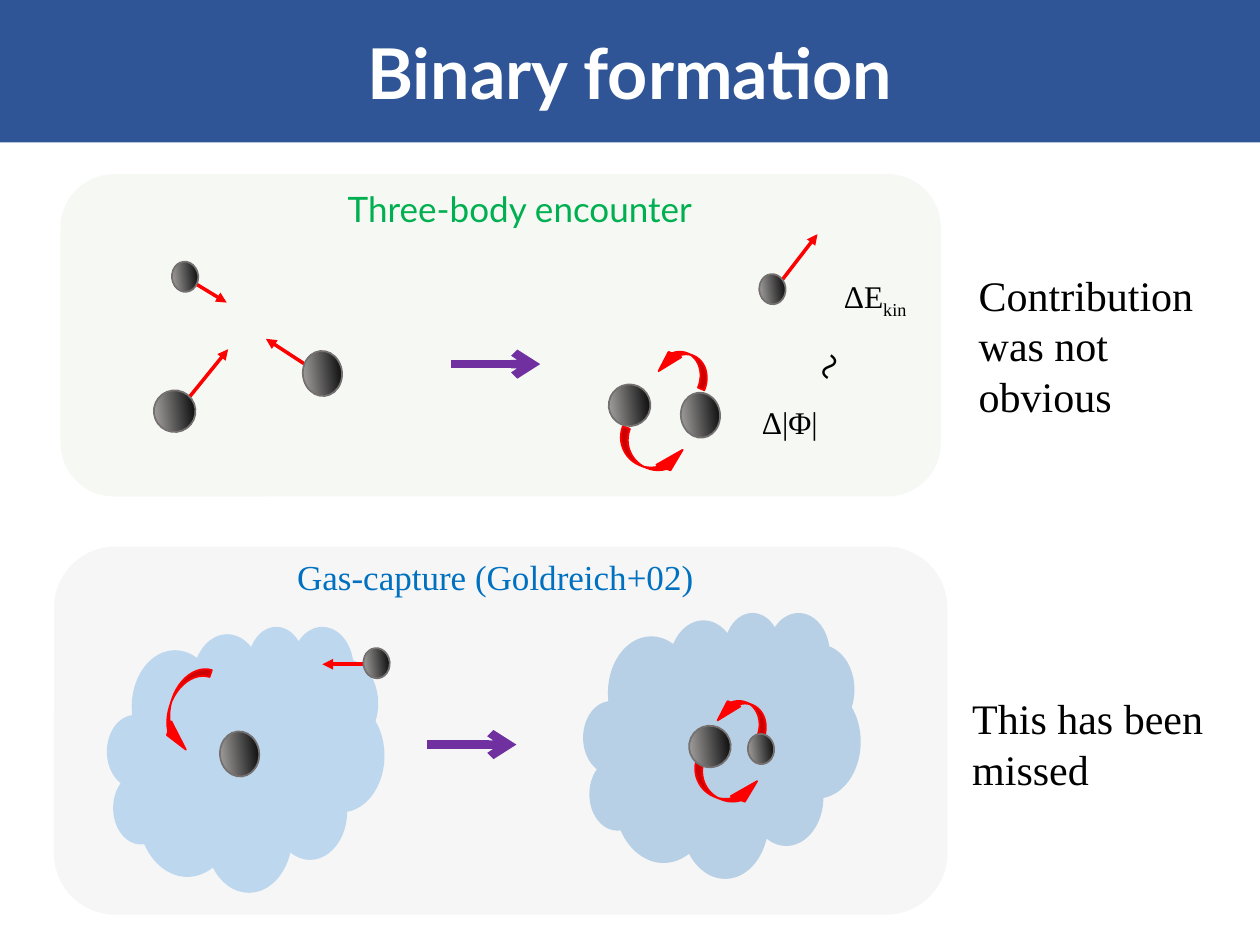
from typing import NamedTuple

from pptx import Presentation
from pptx import util as u
from pptx.dml.color import RGBColor
from pptx.enum import shapes as sh, text as tx
from pptx.oxml.ns import qn
from lxml import etree


class Theme:
    sans, serif = "Lato", "Times New Roman"
    title, note, head, sign, label = 40, 24, 20, 28, 18
    white, black = "FFFFFF", "000000"
    bar, cloud, red, purple = "2F5597", "BDD7EE", "FF0000", "7030A0"
    green, blue = "00B050", "0070C0"
    moss, grey = "548235", "525252"
    shine, rim = "AFABAB", "767171"


class Box(NamedTuple):
    x: float
    y: float
    w: float
    h: float


class Ball(NamedTuple):
    x: float  # centre
    y: float
    size: tuple[float, float]


class Swirl(NamedTuple):
    x: float  # centre
    y: float
    size: tuple[float, float]
    turn: float


class Arrow(NamedTuple):
    x1: float
    y1: float
    x2: float
    y2: float
    color: str = Theme.red
    width: float = 2
    tip: str = "triangle"


SMALL, WIDE, ROUND = (0.61, 0.53), (0.91, 0.79), (0.84, 0.84)
KIND = sh.MSO_SHAPE

deck = Presentation()
deck.slide_width, deck.slide_height = u.Cm(25.4), u.Cm(19.05)
slide = deck.slides.add_slide(deck.slide_layouts[5])


def rgb(code: str) -> RGBColor:
    return RGBColor.from_string(code)


def write(frame, words: str, *, size: float, color: str = Theme.black,
          font: str = Theme.serif, bold: bool = False, align=None,
          sub: str = "", before: float = 0) -> None:
    para = frame.paragraphs[0]
    para.alignment = align
    para.space_before = u.Pt(before)
    for part in filter(None, (words, sub)):
        run = para.add_run()
        run.text = part
        run.font.size, run.font.name, run.font.bold = u.Pt(size), font, bold
        run.font.color.rgb = rgb(color)
    if sub:
        run._r.get_or_add_rPr().set("baseline", "-25000")


def label(box: Box, words: str, wrap: bool = False, turn: float = 0,
          **fmt) -> None:
    item = slide.shapes.add_textbox(*map(u.Cm, box))
    item.rotation = turn
    item.text_frame.word_wrap = wrap
    item.text_frame.auto_size = tx.MSO_AUTO_SIZE.SHAPE_TO_FIT_TEXT
    write(item.text_frame, words, **fmt)


def place(kind, box: Box, turn: float = 0):
    item = slide.shapes.add_shape(kind, *map(u.Cm, box))
    item.shadow.inherit = False
    item.rotation = turn
    return item


def middle(x: float, y: float, size: tuple[float, float]) -> Box:
    w, h = size
    return Box(x - w / 2, y - h / 2, w, h)


def outline(item, color: str) -> None:
    item.line.color.rgb = rgb(color)
    item.line.width = u.Pt(1)


def patch(kind, box: Box, color: str, alpha: int = 100) -> None:
    item = place(kind, box)
    item.fill.solid()
    item.fill.fore_color.rgb = rgb(color)
    item.line.fill.background()
    if alpha < 100:
        tone = item._element.spPr.find(f".//{qn('a:srgbClr')}")
        etree.SubElement(tone, qn("a:alpha"), val=str(alpha * 1000))


def draw_ball(ball: Ball) -> None:
    item = place(KIND.OVAL, middle(*ball), 84)
    item.fill.gradient()
    item.fill.gradient_angle = 270
    for stop, color in zip(item.fill.gradient_stops,
                           (Theme.black, Theme.shine)):
        stop.color.rgb = rgb(color)
    outline(item, Theme.rim)


def draw_swirl(swirl: Swirl) -> None:
    item = place(KIND.CURVED_UP_ARROW, middle(*swirl[:3]), swirl.turn)
    for i, value in enumerate((0.25, 0.5, 0.782)):
        item.adjustments[i] = value
    item.fill.solid()
    item.fill.fore_color.rgb = rgb(Theme.red)
    outline(item, Theme.red)


def draw_arrow(arrow: Arrow) -> None:
    item = slide.shapes.add_connector(sh.MSO_CONNECTOR.STRAIGHT,
                                      *map(u.Cm, arrow[:4]))
    item.line.color.rgb = rgb(arrow.color)
    item.line.width = u.Pt(arrow.width)
    etree.SubElement(item.line._get_or_add_ln(), qn("a:tailEnd"),
                     type=arrow.tip)
    etree.SubElement(item._element.spPr, qn("a:effectLst"))


def step(x: float, y: float) -> Arrow:
    return Arrow(x, y, x + 1.8, y, Theme.purple, 4.75, "arrow")


def orbit(low: tuple[float, float], high: tuple[float, float]) -> list[Swirl]:
    return [Swirl(*low, (1.45, 0.61), 21.6), Swirl(*high, (1.14, 0.56), 202.7)]


def draw_scene(arrows: list[Arrow], swirls: list[Swirl],
               balls: list[Ball]) -> None:
    for items, draw in ((arrows, draw_arrow), (swirls, draw_swirl),
                        (balls, draw_ball)):
        for item in items:
            draw(item)


# Title bar
title = slide.shapes.title
title.left, title.top, title.width, title.height = map(
    u.Cm, Box(0, 0, 25.4, 2.87))
title.fill.solid()
title.fill.fore_color.rgb = rgb(Theme.bar)
title.text_frame.vertical_anchor = tx.MSO_ANCHOR.MIDDLE
write(title.text_frame, "Binary formation", size=Theme.title, bold=True,
      color=Theme.white, font=Theme.sans, align=tx.PP_ALIGN.CENTER)

# Gas capture: the right cloud lies under the panel, the left one over it
patch(KIND.CLOUD, Box(11.76, 12.34, 5.59, 5.36), Theme.cloud)
patch(KIND.ROUNDED_RECTANGLE, Box(1.09, 11.02, 18.01, 7.42), Theme.grey, 5)
patch(KIND.CLOUD, Box(2.16, 12.62, 5.59, 5.36), Theme.cloud)
label(Box(5.74, 11.07, 8.56, 1.12), "Gas-capture (Goldreich+02)",
      size=Theme.head, color=Theme.blue)
draw_scene(
    [Arrow(7.44, 13.39, 6.5, 13.39), step(8.61, 15.01)],
    [*orbit((14.62, 15.82), (14.97, 14.43)),
     Swirl(3.71, 14.29, (1.83, 0.58), 108.1)],
    [Ball(7.59, 13.37, SMALL), Ball(4.83, 15.2, WIDE),
     Ball(14.31, 15.05, ROUND), Ball(15.34, 15.1, SMALL)])

# Three-body encounter
patch(KIND.ROUNDED_RECTANGLE, Box(1.22, 3.51, 17.75, 6.5), Theme.moss, 5)
label(Box(6.76, 3.66, 7.75, 1.12), "Three-body encounter", size=Theme.head,
      color=Theme.green, font=Theme.sans, before=9)
draw_scene(
    [step(9.09, 7.34), Arrow(15.67, 5.77, 16.48, 4.72),
     Arrow(3.78, 8.05, 4.6, 7.04), Arrow(6.22, 7.39, 5.36, 6.83),
     Arrow(3.73, 5.59, 4.57, 6.1)],
    orbit((13.12, 9.14), (13.78, 7.39)),
    [Ball(14.12, 8.37, WIDE), Ball(12.69, 8.17, ROUND),
     Ball(15.57, 5.83, SMALL), Ball(6.5, 7.53, WIDE),
     Ball(3.52, 8.29, ROUND), Ball(3.73, 5.58, SMALL)])

# Energy balance
label(Box(16.76, 5.46, 1.85, 1.02), "ΔE", sub="kin", size=Theme.label)
label(Box(15.11, 8, 1.65, 1.02), "Δ|Φ|", size=Theme.label)
label(Box(16.15, 6.65, 1.04, 1.45), "~", turn=298.8, size=Theme.sign)

# Side notes
label(Box(19.48, 5.31, 5.54, 3.33), "Contribution was not obvious", wrap=True,
      size=Theme.note)
label(Box(19.35, 13.84, 5.54, 2.31), "This has been missed", wrap=True,
      size=Theme.note)

deck.save("out.pptx")
